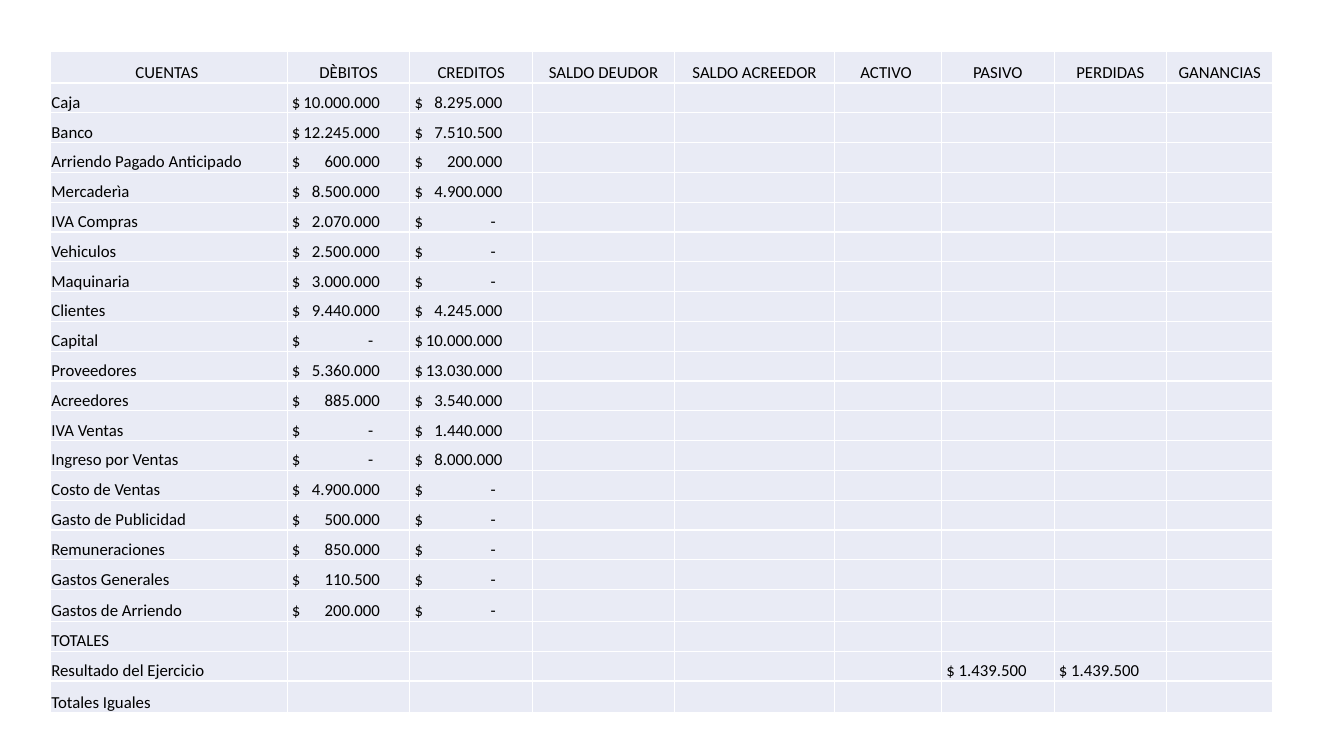
from dataclasses import dataclass

from lxml.etree import SubElement
from pptx import Presentation
from pptx.dml.color import RGBColor
from pptx.enum.text import MSO_ANCHOR, PP_ALIGN
from pptx.oxml import parse_xml
from pptx.oxml.ns import nsdecls, qn
from pptx.util import Pt


@dataclass(frozen=True)
class Theme:
    font: str = "Calibri"
    size: int = 12
    ink: str = "000000"
    cell: str = "E9EBF5"
    border: str = "FFFFFF"
    border_width: int = 1


THEME = Theme()

HEADINGS = ["CUENTAS ", "DÈBITOS", "CREDITOS", "SALDO DEUDOR", "SALDO ACREEDOR",
            "ACTIVO ", "PASIVO", "PERDIDAS", "GANANCIAS"]
COLUMN_WIDTHS = [169.2, 87.6, 87.6, 101.5, 114.3, 76.4, 80.4, 80.4, 76]

# Account, debits, credits
ACCOUNTS = [
    ("Caja", "10.000.000", "8.295.000"),
    ("Banco", "12.245.000", "7.510.500"),
    ("Arriendo Pagado Anticipado", "600.000", "200.000"),
    ("Mercaderìa", "8.500.000", "4.900.000"),
    ("IVA Compras", "2.070.000", "-"),
    ("Vehiculos", "2.500.000", "-"),
    ("Maquinaria", "3.000.000", "-"),
    ("Clientes", "9.440.000", "4.245.000"),
    ("Capital", "-", "10.000.000"),
    ("Proveedores", "5.360.000", "13.030.000"),
    ("Acreedores", "885.000", "3.540.000"),
    ("IVA Ventas", "-", "1.440.000"),
    ("Ingreso por Ventas", "-", "8.000.000"),
    ("Costo de Ventas", "4.900.000", "-"),
    ("Gasto de Publicidad", "500.000", "-"),
    ("Remuneraciones", "850.000", "-"),
    ("Gastos Generales", "110.500", "-"),
    ("Gastos de Arriendo", "200.000", "-"),
]
NET_RESULT = "$ 1.439.500"
CLOSING_ROWS = [
    ["TOTALES"],
    ["Resultado del Ejercicio", "", "", "", "", "", NET_RESULT, NET_RESULT],
    ["Totales Iguales"],
]

ROW_HEIGHT, TALL_ROW_HEIGHT = 21.3, 22.6
CELL_INSET, AMOUNT_INSET = 0.7, 3.4
AMOUNT_TAB, DASH_TAB = 62.8, 58


def ledger_rows():
    accounts = [[name] + [f"$\t{amount}" for amount in amounts]
                for name, *amounts in ACCOUNTS]
    return [HEADINGS] + accounts + CLOSING_ROWS


def add_right_tab(para, position):
    tabs = SubElement(para._p.get_or_add_pPr(), qn("a:tabLst"))
    SubElement(tabs, qn("a:tab"), pos=str(Pt(position)), algn="r")


def set_borders(cell):
    properties = cell._tc.get_or_add_tcPr()
    for index, side in enumerate(("lnL", "lnR", "lnT", "lnB")):
        properties.insert(index, parse_xml(
            f'<a:{side} {nsdecls("a")} w="{Pt(THEME.border_width)}"><a:solidFill>'
            f'<a:srgbClr val="{THEME.border}"/></a:solidFill></a:{side}>'))


def fill_cell(cell, text, is_heading):
    is_amount = text.startswith("$")
    cell.fill.solid()
    cell.fill.fore_color.rgb = RGBColor.from_string(THEME.cell)
    set_borders(cell)
    cell.vertical_anchor = MSO_ANCHOR.BOTTOM
    cell.margin_left = Pt(AMOUNT_INSET if is_amount else CELL_INSET)
    cell.margin_right = cell.margin_top = Pt(CELL_INSET)
    cell.margin_bottom = Pt(0)

    para = cell.text_frame.paragraphs[0]
    para.text = text
    para.alignment = PP_ALIGN.CENTER if is_heading else PP_ALIGN.LEFT
    if "\t" in text:
        add_right_tab(para, DASH_TAB if text.endswith("-") else AMOUNT_TAB)
    for span in para.runs:
        span.font.name = THEME.font
        span.font.size = Pt(THEME.size)
        span.font.color.rgb = RGBColor.from_string(THEME.ink)
    # Empty cells need the small size too, or their rows grow
    if not text:
        SubElement(para._p, qn("a:endParaRPr"), sz=str(THEME.size * 100))


def add_ledger(page, left, top):
    rows = ledger_rows()
    tall_rows = {0, len(ACCOUNTS), len(rows) - 1}
    heights = [TALL_ROW_HEIGHT if index in tall_rows else ROW_HEIGHT
               for index in range(len(rows))]
    table = page.shapes.add_table(len(rows), len(HEADINGS), Pt(left), Pt(top),
                                  Pt(sum(COLUMN_WIDTHS)), Pt(sum(heights))).table
    table.first_row = table.horz_banding = False
    for column, width in zip(table.columns, COLUMN_WIDTHS):
        column.width = Pt(width)
    for index, (values, height) in enumerate(zip(rows, heights)):
        table.rows[index].height = Pt(height)
        padded = values + [""] * (len(HEADINGS) - len(values))
        for cell, text in zip(table.rows[index].cells, padded):
            fill_cell(cell, text, is_heading=index == 0)


def main():
    deck = Presentation()
    deck.slide_width, deck.slide_height = Pt(960), Pt(540)
    page = deck.slides.add_slide(deck.slide_layouts[6])
    add_ledger(page, left=36, top=36.7)
    deck.save("out.pptx")


if __name__ == "__main__":
    main()
